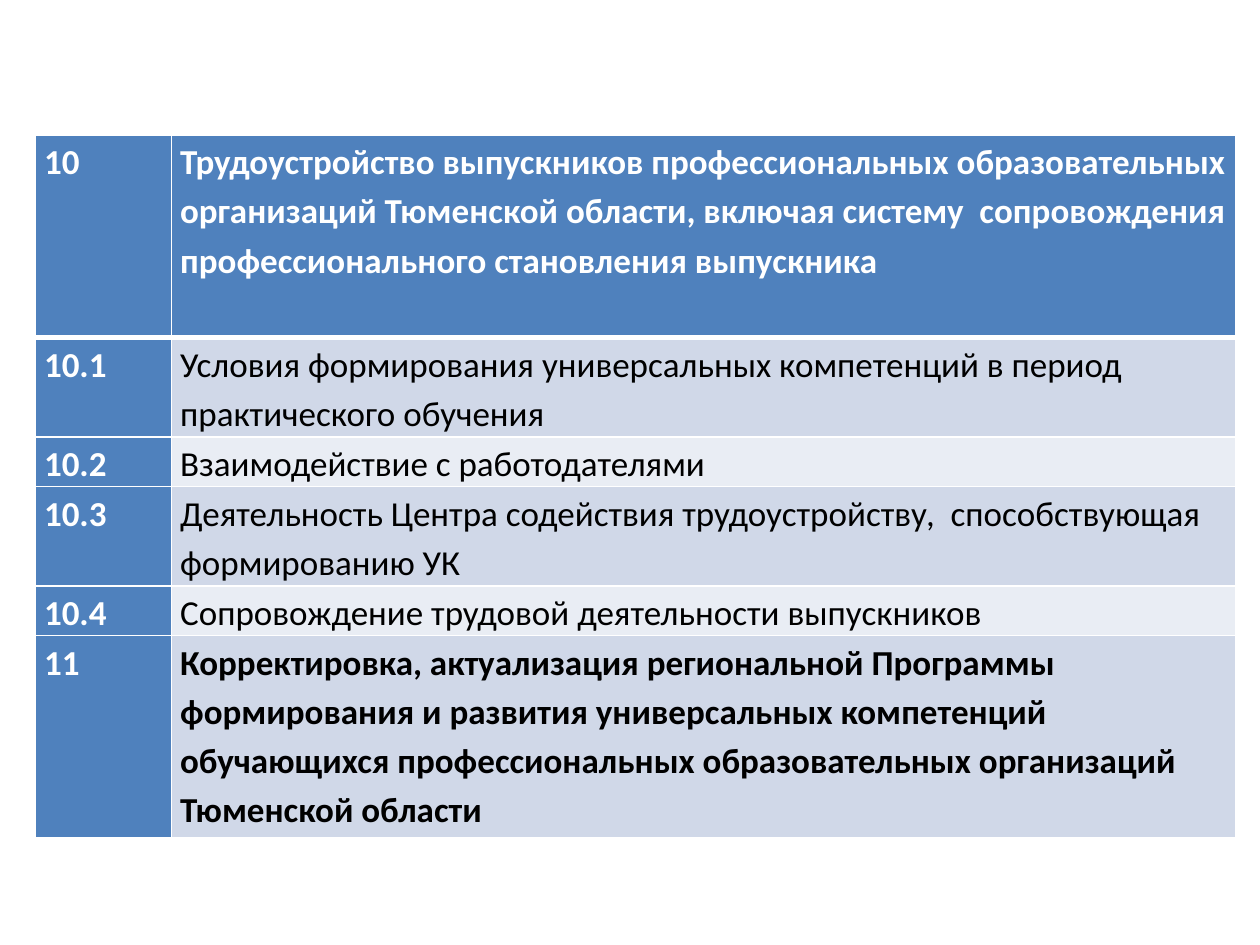
from lxml import etree
from pptx import Presentation
from pptx import util as u
from pptx.dml.color import RGBColor
from pptx.oxml import ns

WHITE = RGBColor(0xFF, 0xFF, 0xFF)
BLACK = RGBColor(0x00, 0x00, 0x00)
BLUE = RGBColor(0x4F, 0x81, 0xBD)
BANDS = (RGBColor(0xD0, 0xD8, 0xE8), RGBColor(0xE9, 0xED, 0xF4))

COLUMN_WIDTHS = (1.08, 8.45)
LINE_HEIGHT = 0.4
PROGRAM_ITEMS = (
    ("10", "Трудоустройство выпускников профессиональных образовательных организаций "
           "Тюменской области, включая систему  сопровождения профессионального "
           "становления выпускника", 1.61, True),
    ("10.1", "Условия формирования универсальных компетенций в период "
             "практического обучения", 0.79, False),
    ("10.2", "Взаимодействие с работодателями", 0.38, False),
    ("10.3", "Деятельность Центра содействия трудоустройству,  способствующая "
             "формированию УК", 0.79, False),
    ("10.4", "Сопровождение трудовой деятельности выпускников", 0.38, False),
    ("11", "Корректировка, актуализация региональной Программы формирования и развития "
           "универсальных компетенций обучающихся профессиональных образовательных "
           "организаций Тюменской области", 1.61, True),
)


def write_text(text_frame, content, *, size=20, color=BLACK, bold=False, spacing=1.15):
    paragraph = text_frame.paragraphs[0]
    paragraph.line_spacing = spacing
    run = paragraph.add_run()
    run.text = content
    run.font.name = "Calibri"
    run.font.size = u.Pt(size)
    run.font.bold = bold
    run.font.color.rgb = color


class SlideBuilder:
    def __init__(self, slide):
        self.slide = slide

    def border(self, cell, side, width):
        properties = cell._tc.get_or_add_tcPr()
        line = etree.SubElement(properties, ns.qn(f"a:ln{side}"), w=str(u.Pt(width)))
        fill = etree.SubElement(line, ns.qn("a:solidFill"))
        etree.SubElement(fill, ns.qn("a:srgbClr"), val=str(WHITE))

    def cell(self, cell, content, fill, color, bold, top=1, bottom=1):
        cell.margin_left = cell.margin_right = u.Inches(0.07)
        cell.margin_top = cell.margin_bottom = 0
        for side, width in (("L", 1), ("R", 1), ("T", top), ("B", bottom)):
            self.border(cell, side, width)
        cell.fill.solid()
        cell.fill.fore_color.rgb = fill
        write_text(cell.text_frame, content, color=color, bold=bold)

    def table(self, left, top, items):
        height = sum(item[2] for item in items)
        frame = self.slide.shapes.add_table(
            len(items), len(COLUMN_WIDTHS), u.Inches(left), u.Inches(top),
            u.Inches(sum(COLUMN_WIDTHS)), u.Inches(height))
        table = frame.table
        table.first_col = True
        for column, width in zip(table.columns, COLUMN_WIDTHS):
            column.width = u.Inches(width)
        for index, (number, title, row_height, bold) in enumerate(items):
            table.rows[index].height = u.Inches(row_height)
            header = index == 0
            edges = {"top": 3 if index == 1 else 1, "bottom": 3 if header else 1}
            fill = BLUE if header else BANDS[(index - 1) % 2]
            color = WHITE if header else BLACK
            self.cell(table.cell(index, 0), number, BLUE, WHITE, True, **edges)
            self.cell(table.cell(index, 1), title, fill, color, bold, **edges)


def main():
    presentation = Presentation()
    presentation.slide_width = u.Inches(10)
    presentation.slide_height = u.Inches(7.5)
    slide = presentation.slides.add_slide(presentation.slide_layouts[6])
    SlideBuilder(slide).table(0.28, 1.07, PROGRAM_ITEMS)
    presentation.save("out.pptx")


if __name__ == "__main__":
    main()
